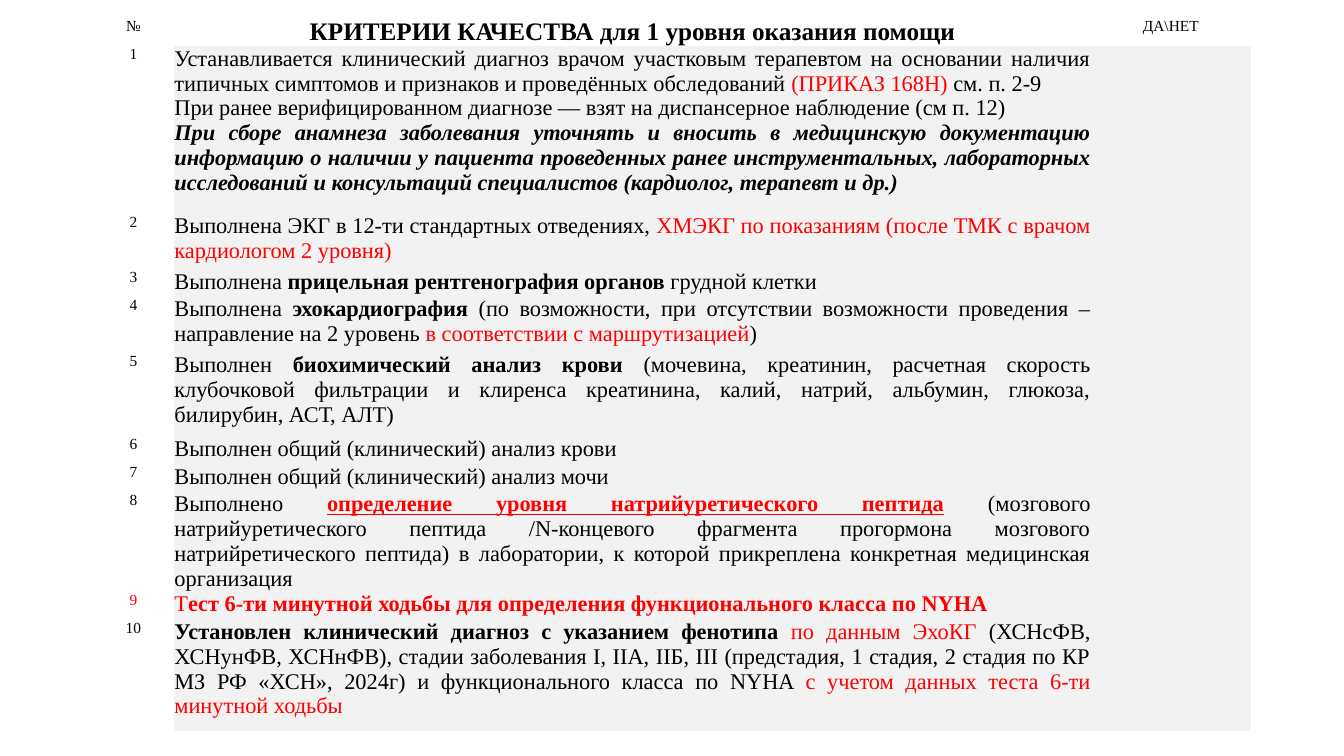
from pptx import Presentation
from pptx.dml.color import RGBColor
from pptx.enum.text import MSO_ANCHOR, PP_ALIGN as Align
from pptx.oxml.ns import qn
from pptx.util import Pt

NO_STYLE_NO_GRID = "{2D5ABB26-0587-4C30-8999-92F81FD0307C}"
BLACK, RED, PALE_GREY = "000000", "FF0000", "F2F2F2"

PLAIN = {}
BOLD = {"bold": True}
BOLD_ITALIC = {"bold": True, "italic": True}
ACCENT = {"color": RED}
ACCENT_BOLD = {"color": RED, "bold": True}
ACCENT_LINK = {"color": RED, "bold": True, "underline": True}

COLUMN_WIDTHS = [58.6, 654.5, 114.5]
HEADER_HEIGHT = 13.7
LINE_HEIGHT = 19.9

# Each criterion: height in text lines, then paragraphs made of (text, format) runs.
CRITERIA = [
    (6, [
        [("Устанавливается клинический диагноз врачом участковым терапевтом на основании "
          "наличия типичных симптомов и признаков и проведённых обследований ", PLAIN),
         ("(ПРИКАЗ 168Н)", ACCENT), (" см. п. 2-9", PLAIN)],
        [("При ранее верифицированном диагнозе — взят на диспансерное наблюдение (см п. 12)",
          PLAIN)],
        [("При сборе анамнеза заболевания уточнять и вносить в медицинскую документацию "
          "информацию о наличии у пациента проведенных ранее инструментальных, лабораторных "
          "исследований и консультаций специалистов (кардиолог, терапевт и др.)", BOLD_ITALIC)],
    ]),
    (2, [[("Выполнена ЭКГ в 12-ти стандартных отведениях, ", PLAIN),
          ("ХМЭКГ по показаниям (после ТМК с врачом кардиологом 2 уровня)", ACCENT)]]),
    (1, [[("Выполнена ", PLAIN), ("прицельная рентгенография органов", BOLD),
          (" грудной клетки", PLAIN)]]),
    (2, [[("Выполнена ", PLAIN), ("эхокардиография", BOLD),
          (" (по возможности, при отсутствии возможности проведения – направление на 2 уровень ",
           PLAIN),
          ("в соответствии с маршрутизацией", ACCENT), (")", PLAIN)]]),
    (3, [[("Выполнен ", PLAIN), ("биохимический анализ крови", BOLD),
          (" (мочевина, креатинин, расчетная скорость клубочковой фильтрации и клиренса "
           "креатинина, калий, натрий, альбумин, глюкоза, билирубин, АСТ, АЛТ)", PLAIN)]]),
    (1, [[("Выполнен общий (клинический) анализ крови", PLAIN)]]),
    (1, [[("Выполнен общий (клинический) анализ мочи", PLAIN)]]),
    (3, [[("Выполнено ", PLAIN),
          ("определение уровня натрийуретического пептида", ACCENT_LINK),
          (" (мозгового натрийуретического пептида /N-концевого фрагмента прогормона мозгового "
           "натрийретического пептида) в лаборатории, к которой прикреплена конкретная "
           "медицинская организация", PLAIN)]]),
    (1, [[("Т", ACCENT),
          ("ест 6-ти минутной ходьбы для определения функционального класса по NYHA",
           ACCENT_BOLD)]]),
    (4, [[("Установлен клинический диагноз с указанием фенотипа ", BOLD),
          ("по данным ЭхоКГ", ACCENT),
          (" (ХСНсФВ, ХСНунФВ, ХСНнФВ), стадии заболевания I, IIA, IIБ, III (предстадия, "
           "1 стадия, 2 стадия по КР МЗ РФ «ХСН», 2024г) и функционального класса по NYHA ",
           PLAIN),
          ("с учетом данных теста 6-ти минутной ходьбы", ACCENT)]]),
]


def rgb(value):
    return RGBColor.from_string(value)


class SlideBuilder:
    font = "Times New Roman"
    title_size, body_size, label_size = 18, 16, 11

    def __init__(self, slide):
        self.slide = slide

    def table(self, left, top, widths, heights):
        frame = self.slide.shapes.add_table(
            len(heights), len(widths), Pt(left), Pt(top), Pt(sum(widths)), Pt(sum(heights)))
        table = frame.table
        table.first_row = table.horz_banding = False
        table._tbl.tblPr.find(qn("a:tableStyleId")).text = NO_STYLE_NO_GRID
        for column, width in zip(table.columns, widths):
            column.width = Pt(width)
        for row, height in zip(table.rows, heights):
            row.height = Pt(height)
        return table

    def cell(self, cell, paragraphs, size, align=Align.CENTER, fill=None):
        for side in ("left", "right", "top", "bottom"):
            setattr(cell, f"margin_{side}", 0)
        cell.vertical_anchor = MSO_ANCHOR.TOP
        if fill:
            cell.fill.solid()
            cell.fill.fore_color.rgb = rgb(fill)
        else:
            cell.fill.background()
        tf = cell.text_frame
        for i, runs in enumerate(paragraphs):
            p = tf.add_paragraph() if i else tf.paragraphs[0]
            p.alignment = align
            for text, style in runs:
                self.run(p, text, size, style)
            if not runs:
                # An empty cell takes its line height from the end mark.
                p._p.get_or_add_endParaRPr().set("sz", str(size * 100))

    def run(self, p, text, size, style):
        r = p.add_run()
        r.text = text
        values = {"name": self.font, "size": Pt(size), "bold": False, "italic": False, **style}
        r.font.color.rgb = rgb(values.pop("color", BLACK))
        for name, value in values.items():
            setattr(r.font, name, value)


def main():
    prs = Presentation()
    prs.slide_width, prs.slide_height = Pt(960), Pt(540)
    s = SlideBuilder(prs.slides.add_slide(prs.slide_layouts[6]))

    heights = [HEADER_HEIGHT] + [lines * LINE_HEIGHT for lines, _ in CRITERIA]
    table = s.table(66, 13, COLUMN_WIDTHS, heights)

    headers = [("№", s.label_size, PLAIN),
               ("КРИТЕРИИ КАЧЕСТВА для 1 уровня оказания помощи", s.title_size, BOLD),
               ("ДА\\НЕТ", s.label_size, PLAIN)]
    for col, (text, size, style) in enumerate(headers):
        s.cell(table.cell(0, col), [[(text, style)]], size)

    for number, (_, paragraphs) in enumerate(CRITERIA, 1):
        number_style = ACCENT if number == 9 else PLAIN
        s.cell(table.cell(number, 0), [[(str(number), number_style)]], s.label_size)
        s.cell(table.cell(number, 1), paragraphs, s.body_size, Align.JUSTIFY, PALE_GREY)
        s.cell(table.cell(number, 2), [[]], s.label_size, fill=PALE_GREY)

    prs.save("out.pptx")


if __name__ == "__main__":
    main()
